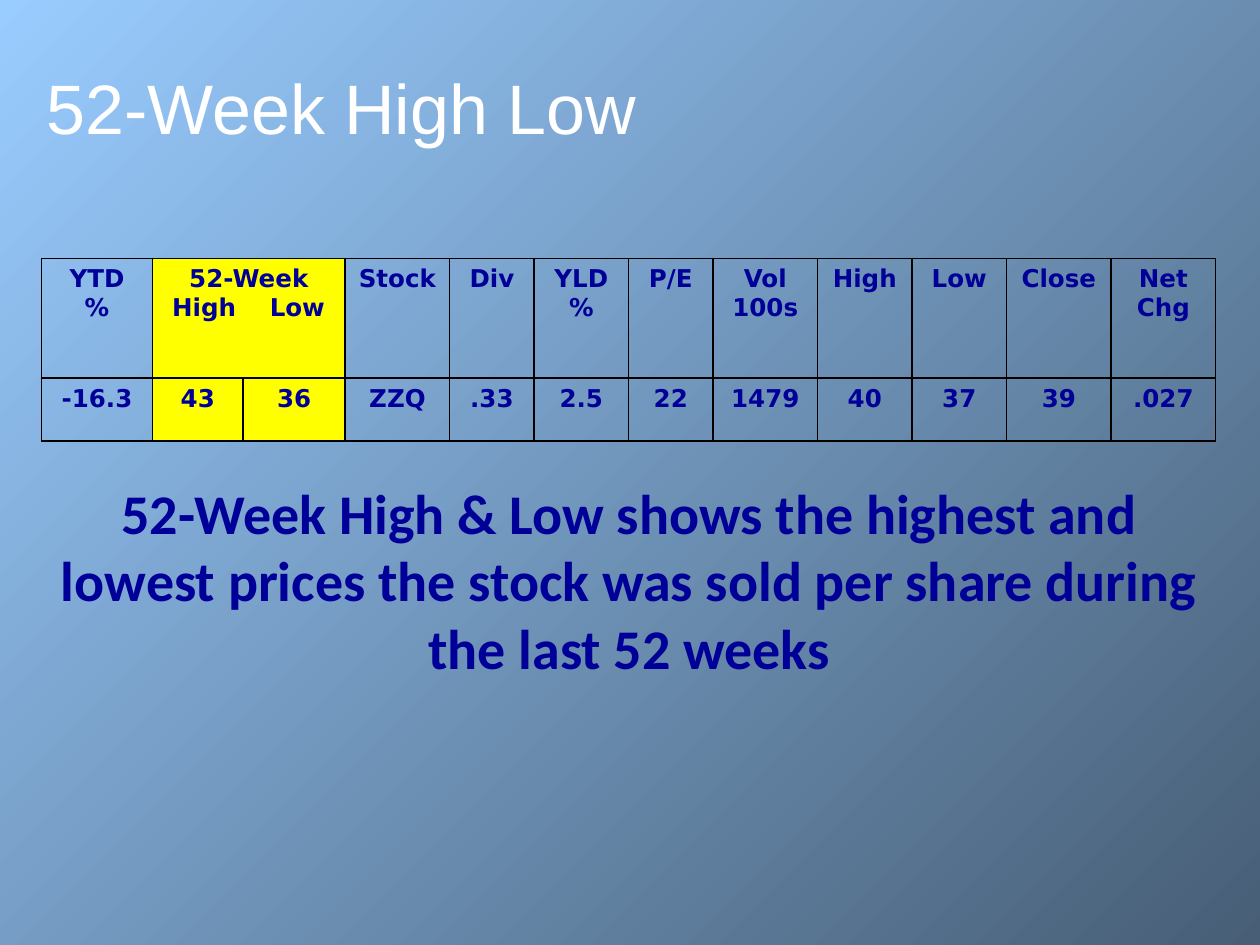
import pptx
import pptx.util
import pptx.dml.color
import pptx.enum.text
import pptx.oxml
import pptx.oxml.ns
from pptx.util import Inches, Pt

TITLE = "52-Week High Low"
NOTE = ("52-Week High & Low shows the highest and lowest prices "
        "the stock was sold per share during the last 52 weeks")
# header lines, value, column width; the 52-week header spans two columns
COLUMNS = [
    (["YTD", "%"], "-16.3", 0.88),
    (["52-Week", "\tHigh\tLow"], "43", 0.72),
    ([], "36", 0.81),
    (["Stock"], "ZZQ", 0.83),
    (["Div"], ".33", 0.67),
    (["YLD", "%"], "2.5", 0.75),
    (["P/E"], "22", 0.67),
    (["Vol", "100s"], "1479", 0.83),
    (["High"], "40", 0.75),
    (["Low"], "37", 0.75),
    (["Close"], "39", 0.83),
    (["Net", "Chg"], ".027", 0.83),
]
ROW_HEIGHTS = [0.95, 0.5]
HIGHLIGHT = (1, 2)
HIGH_LOW_TABS = (0.31, 1.05)
NAVY, YELLOW, WHITE = "000099", "FFFF00", "FFFFFF"
LEFT, WIDTH = 0.33, 9.33
CENTER = pptx.enum.text.PP_ALIGN.CENTER


def rgb(value):
    return pptx.dml.color.RGBColor.from_string(value)


def style(p, font, size, color, bold=False, align=None):
    p.alignment = align
    p.font.name, p.font.size, p.font.bold = font, Pt(size), bold
    p.font.color.rgb = rgb(color)


def add_text(slide, text, box, anchor, **look):
    tf = slide.shapes.add_textbox(*map(Inches, box)).text_frame
    tf.word_wrap = True
    tf.vertical_anchor = anchor
    tf.text = text
    style(tf.paragraphs[0], **look)


def set_borders(cell):
    tc_pr = cell._tc.get_or_add_tcPr()
    for i, side in enumerate(("lnL", "lnR", "lnT", "lnB")):
        tc_pr.insert(i, pptx.oxml.parse_xml(
            f'<a:{side} {pptx.oxml.ns.nsdecls("a")} w="{Pt(1)}">'
            f'<a:solidFill><a:srgbClr val="000000"/></a:solidFill></a:{side}>'))


def set_center_tabs(p, positions):
    stops = "".join(f'<a:tab pos="{Inches(x)}" algn="ctr"/>' for x in positions)
    tabs = pptx.oxml.parse_xml(
        f'<a:tabLst {pptx.oxml.ns.nsdecls("a")}>{stops}</a:tabLst>')
    p_pr = p._p.get_or_add_pPr()
    p_pr.insert(0, tabs)
    p.alignment = pptx.enum.text.PP_ALIGN.LEFT


def fill_cell(cell, lines, highlighted):
    set_borders(cell)
    if highlighted:
        cell.fill.solid()
        cell.fill.fore_color.rgb = rgb(YELLOW)
    else:
        cell.fill.background()
    cell.text = "\n".join(lines)
    for p in cell.text_frame.paragraphs:
        style(p, "DejaVu Sans", 14, NAVY, True, CENTER)
        if "\t" in p.text:
            set_center_tabs(p, HIGH_LOW_TABS)


def add_quote_table(slide):
    table = slide.shapes.add_table(
        len(ROW_HEIGHTS), len(COLUMNS), Inches(LEFT), Inches(2.05),
        Inches(WIDTH), Inches(sum(ROW_HEIGHTS))).table
    table.first_row = table.horz_banding = False
    for row, height in zip(table.rows, ROW_HEIGHTS):
        row.height = Inches(height)
    for c, (header, value, width) in enumerate(COLUMNS):
        table.columns[c].width = Inches(width)
        for r, lines in enumerate((header, [value])):
            fill_cell(table.cell(r, c), lines, c in HIGHLIGHT)
    table.cell(0, HIGHLIGHT[0]).merge(table.cell(0, HIGHLIGHT[1]))


def main():
    prs = pptx.Presentation()
    prs.slide_width, prs.slide_height = Inches(10), Inches(7.5)
    slide = prs.slides.add_slide(prs.slide_layouts[6])

    # Background: diagonal gradient
    bg = slide.background.fill
    bg.gradient()
    bg.gradient_angle = 315
    for stop, color in zip(bg.gradient_stops, ("99CCFF", "475E76")):
        stop.color.rgb = rgb(color)

    # Title, quote table, explanation
    anchors = pptx.enum.text.MSO_ANCHOR
    add_text(slide, TITLE, (0.27, 0.28, 9.45, 0.95), anchors.BOTTOM,
             font="Arial", size=40, color=WHITE)
    add_quote_table(slide)
    add_text(slide, NOTE, (LEFT, 3.75, WIDTH, 1.7), anchors.TOP,
             font="Calibri", size=32, color=NAVY, bold=True, align=CENTER)

    prs.save("out.pptx")


if __name__ == "__main__":
    main()
